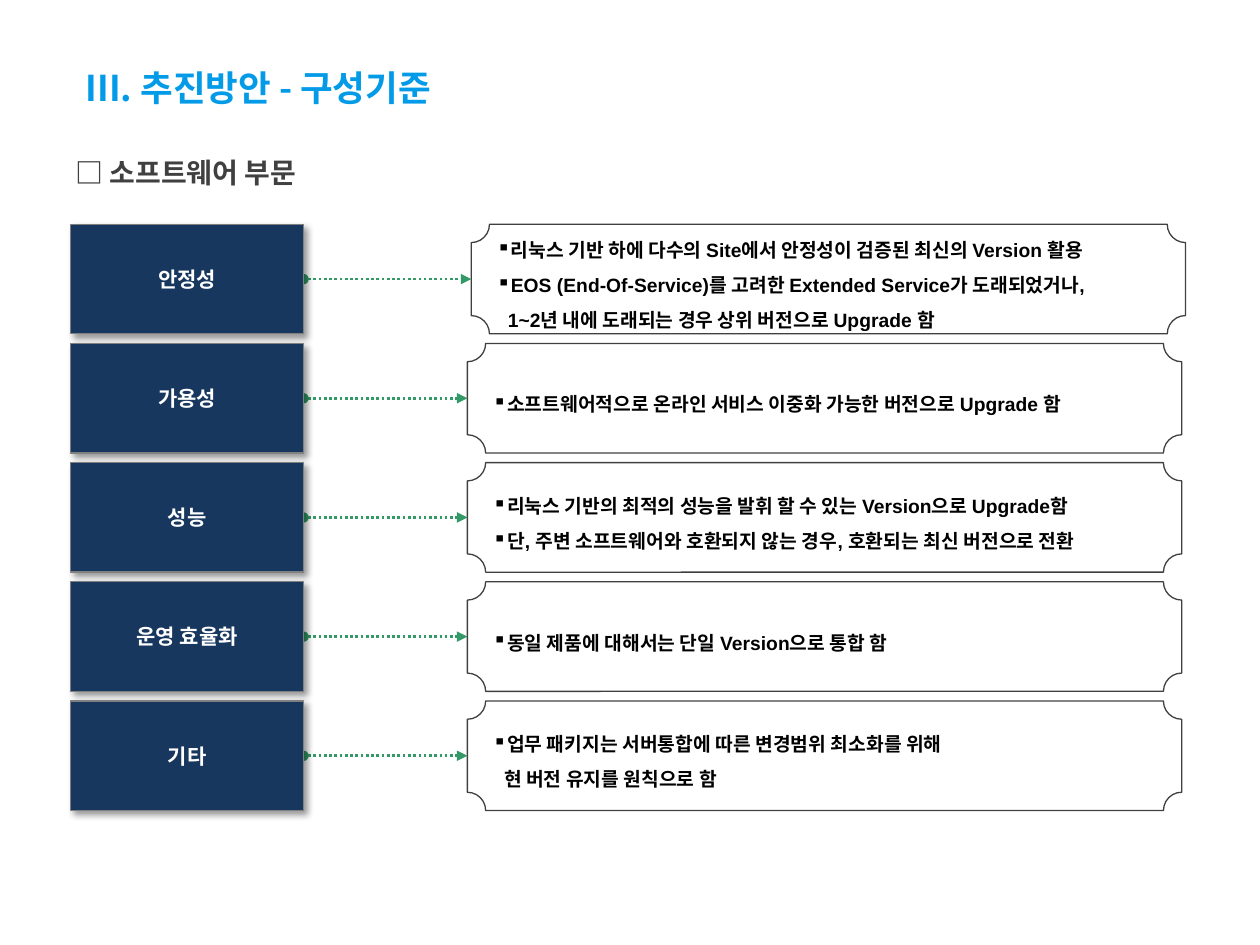
import pptx
import pptx.dml.color
import pptx.enum.dml
import pptx.enum.shapes
import pptx.enum.text
import pptx.oxml
import pptx.oxml.ns
import pptx.util

Pt = pptx.util.Pt
SHAPES = pptx.enum.shapes.MSO_SHAPE
ANCHOR = pptx.enum.text.MSO_ANCHOR
ALIGN = pptx.enum.text.PP_ALIGN

TOP, PITCH, HEIGHT = 128.2, 68.1, 62.6
LABEL_LEFT, LABEL_WIDTH = 40.3, 133.2
DETAIL_LEFT, DETAIL_WIDTH = 267.1, 408.2
HANG = 6.5

CRITERIA = [
    ("안정성", 2.2, [
        ("▪", "리눅스 기반 하에 다수의 Site에서 안정성이 검증된 최신의 Version 활용"),
        ("▪", "EOS (End-Of-Service)를 고려한 Extended Service가 도래되었거나,"),
        ("", "1~2년 내에 도래되는 경우 상위 버전으로 Upgrade 함"),
    ]),
    ("가용성", 0, [
        ("▪", "소프트웨어적으로 온라인 서비스 이중화 가능한 버전으로 Upgrade 함"),
    ]),
    ("성능", 0, [
        ("▪", "리눅스 기반의 최적의 성능을 발휘 할 수 있는 Version으로 Upgrade함"),
        ("▪", "단, 주변 소프트웨어와 호환되지 않는 경우, 호환되는 최신 버전으로 전환"),
    ]),
    ("운영 효율화", 0, [
        ("▪", "동일 제품에 대해서는 단일 Version으로 통합 함"),
    ]),
    ("기타", 0, [
        ("▪", "업무 패키지는 서버통합에 따른 변경범위 최소화를 위해"),
        ("", "현 버전 유지를 원칙으로 함"),
    ]),
]


def color(hex_string):
    return pptx.dml.color.RGBColor.from_string(hex_string)


def add_xml(parent, xml):
    namespaces = pptx.oxml.ns.nsdecls("a")
    element = pptx.oxml.parse_xml(xml.replace(">", f" {namespaces}>", 1))
    parent.append(element)


class SlideBuilder:
    """Holds the style and the current slide, and adds each kind of element."""

    font_name = "Arial"
    title_font = "Noto Sans CJK KR"
    navy, gray, dark, green = "17375E", "808080", "404040", "339966"

    def __init__(self, slide):
        self.slide = slide

    def format_runs(self, paragraph, size, hex_string, font_name=None):
        for run in paragraph.runs:
            run.font.name = font_name or self.font_name
            run.font.size = Pt(size)
            run.font.bold = True
            run.font.color.rgb = color(hex_string)

    def add_heading(self, text, box, size, hex_string, margins, anchor, font_name=None):
        shape = self.slide.shapes.add_textbox(*map(Pt, box))
        text_frame = shape.text_frame
        text_frame.word_wrap = True
        text_frame.vertical_anchor = anchor
        text_frame.margin_left = 0
        text_frame.margin_top = text_frame.margin_bottom = Pt(margins[0])
        text_frame.margin_right = Pt(margins[1])
        text_frame.text = text
        self.format_runs(text_frame.paragraphs[0], size, hex_string, font_name)
        return text_frame.paragraphs[0]

    def add_box(self, kind, left, top, width, line_color):
        shape = self.slide.shapes.add_shape(kind, *map(Pt, (left, top, width, HEIGHT)))
        shape.shadow.inherit = False
        shape.line.color.rgb = color(line_color)
        shape.line.width = Pt(0.75)
        shape.text_frame.word_wrap = True
        shape.text_frame.vertical_anchor = ANCHOR.MIDDLE
        return shape

    def add_detail(self, left, top, lines):
        shape = self.add_box(SHAPES.PLAQUE, left, top, DETAIL_WIDTH, self.dark)
        shape.fill.background()
        text_frame = shape.text_frame
        text_frame.text = "\n".join(text for _, text in lines)
        for paragraph, (bullet, _) in zip(text_frame.paragraphs, lines):
            paragraph.alignment = ALIGN.LEFT
            paragraph.line_spacing = 1.5
            properties = paragraph._p.get_or_add_pPr()
            properties.set("marL", str(Pt(HANG)))
            if bullet:
                properties.set("indent", str(-Pt(HANG)))
                add_xml(properties, f'<a:buChar char="{bullet}"></a:buChar>')
            self.format_runs(paragraph, 11, "000000")
        return shape

    def add_label(self, top, text):
        shape = self.add_box(SHAPES.RECTANGLE, LABEL_LEFT, top, LABEL_WIDTH, self.gray)
        shape.fill.solid()
        shape.fill.fore_color.rgb = color(self.navy)
        effects = shape._element.spPr.find(pptx.oxml.ns.qn("a:effectLst"))
        add_xml(effects, f'<a:outerShdw blurRad="{Pt(4)}" dist="{Pt(3)}" dir="2700000" '
                         'algn="tl" rotWithShape="0"><a:srgbClr val="000000">'
                         '<a:alpha val="40000"/></a:srgbClr></a:outerShdw>')
        shape.text_frame.text = text
        paragraph = shape.text_frame.paragraphs[0]
        paragraph.alignment = ALIGN.CENTER
        self.format_runs(paragraph, 12, "FFFFFF")
        return shape

    def add_arrow(self):
        connector = self.slide.shapes.add_connector(
            pptx.enum.shapes.MSO_CONNECTOR.STRAIGHT, 0, 0, 0, 0)
        connector.line.color.rgb = color(self.green)
        connector.line.width = Pt(1.5)
        connector.line.dash_style = pptx.enum.dml.MSO_LINE.ROUND_DOT
        line = connector.line._get_or_add_ln()
        add_xml(line, '<a:headEnd type="oval"></a:headEnd>')
        add_xml(line, '<a:tailEnd type="triangle"></a:tailEnd>')
        add_xml(connector._element.spPr, "<a:effectLst></a:effectLst>")
        return connector

    def add_criterion(self, top, label_text, shift, lines):
        detail = self.add_detail(DETAIL_LEFT + shift, top, lines)
        arrow = self.add_arrow()
        label = self.add_label(top, label_text)
        arrow.begin_connect(label, 3)
        arrow.end_connect(detail, 1)


def main():
    presentation = pptx.Presentation()
    presentation.slide_width, presentation.slide_height = Pt(720), Pt(540)
    builder = SlideBuilder(presentation.slides.add_slide(presentation.slide_layouts[6]))
    builder.add_heading("III. 추진방안 - 구성기준", (49, 33.1, 607.7, 33.8), 20.3,
                        "039BE7", (3.6, 7.2), ANCHOR.MIDDLE, builder.title_font)
    subtitle = builder.add_heading("□ 소프트웨어 부문", (43.2, 85, 634.3, 20.9), 16,
                                   builder.dark, (0, 0), ANCHOR.TOP)
    subtitle.line_spacing = 1.2
    for row, (label_text, shift, lines) in enumerate(CRITERIA):
        builder.add_criterion(TOP + row * PITCH, label_text, shift, lines)
    presentation.save("out.pptx")


if __name__ == "__main__":
    main()
